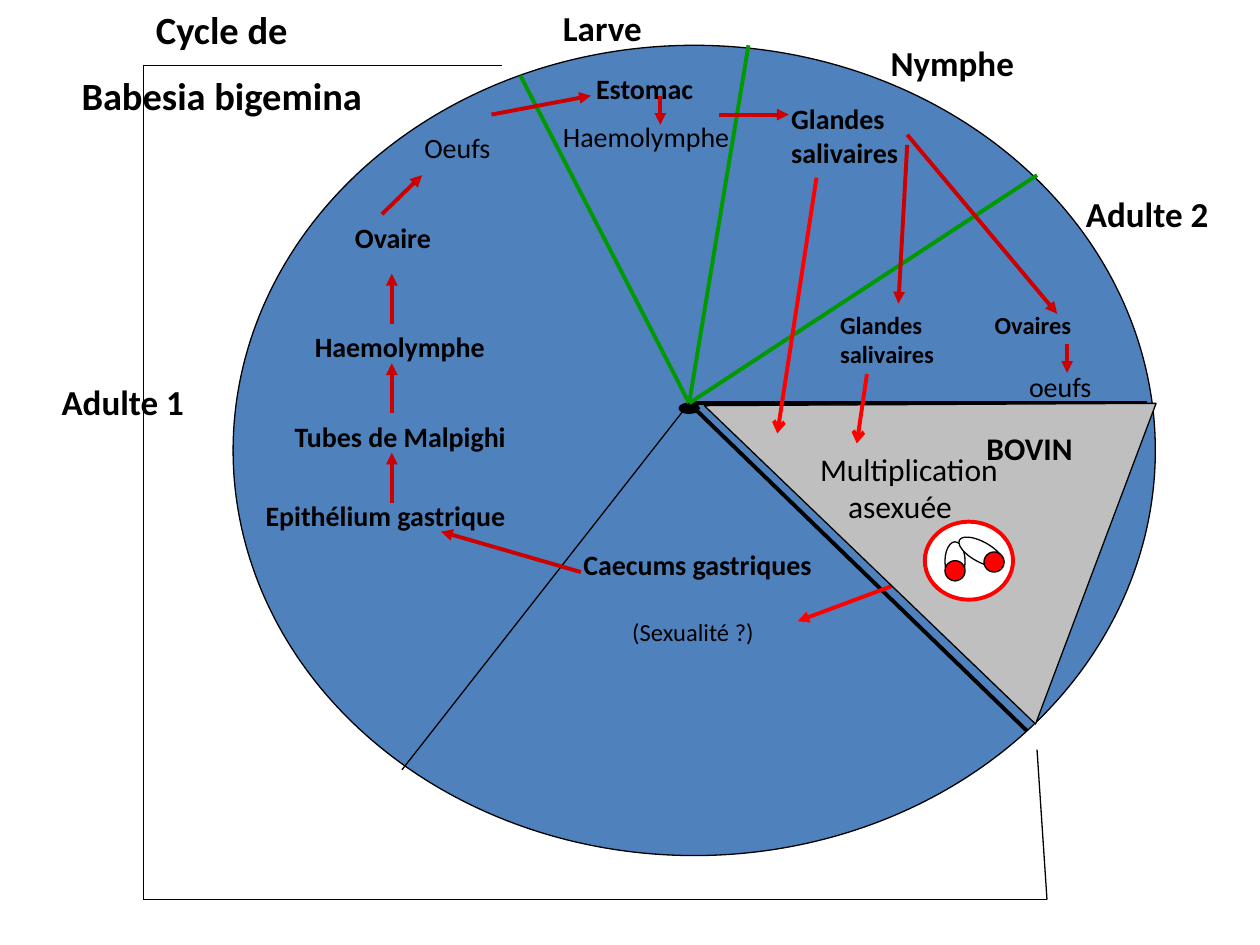
from dataclasses import dataclass
from itertools import pairwise

from lxml import etree
from pptx import Presentation
from pptx.dml.color import RGBColor
from pptx.enum.shapes import MSO_CONNECTOR, MSO_SHAPE
from pptx.enum.text import MSO_AUTO_SIZE, PP_ALIGN
from pptx.oxml.ns import qn
from pptx.util import Pt

OVAL = MSO_SHAPE.OVAL
TRIANGLE = MSO_SHAPE.ISOSCELES_TRIANGLE
STRAIGHT = MSO_CONNECTOR.STRAIGHT
GROW = MSO_AUTO_SIZE.SHAPE_TO_FIT_TEXT
LEFT, CENTER = PP_ALIGN.LEFT, PP_ALIGN.CENTER

Point = tuple[float, float]


@dataclass(frozen=True)
class Theme:
    font: str = "Calibri"
    black: str = "000000"
    white: str = "FFFFFF"
    wheel: str = "4F81BD"
    cattle: str = "BFBFBF"
    stage: str = "009900"
    tick_path: str = "CC0000"
    red: str = "FF0000"
    thin: float = 0.75
    thick: float = 2.25
    title: float = 22
    heading: float = 20
    host: float = 18
    body: float = 16
    small: float = 14


THEME = Theme()


@dataclass(frozen=True)
class Line:
    start: Point
    end: Point
    color: str = THEME.tick_path
    width: float = THEME.thick
    head: str = "triangle"


@dataclass(frozen=True)
class Body:
    left: float
    top: float
    width: float
    height: float
    fill: str
    line: str = THEME.black
    weight: float = THEME.thin
    rotation: float = 0
    kind: MSO_SHAPE = OVAL


@dataclass(frozen=True)
class Words:
    text: str
    bold: bool = True
    indent: float = 0


@dataclass(frozen=True)
class Label:
    left: float
    top: float
    width: float
    height: float
    size: float
    paras: tuple[Words, ...]
    align: PP_ALIGN = LEFT
    spacing: float = 0.5  # share of the type size, between paragraphs


def draw_line(page, line: Line) -> None:
    ends = [Pt(value) for value in (*line.start, *line.end)]
    connector = page.shapes.add_connector(STRAIGHT, *ends)
    connector.line.color.rgb = RGBColor.from_string(line.color)
    connector.line.width = Pt(line.width)
    if line.head:
        outline = connector.line._get_or_add_ln()
        etree.SubElement(outline, qn("a:tailEnd"), type=line.head)
    etree.SubElement(connector._element.spPr, qn("a:effectLst"))


def draw_body(page, body: Body):
    shape = page.shapes.add_shape(
        body.kind, Pt(body.left), Pt(body.top), Pt(body.width), Pt(body.height))
    shape.shadow.inherit = False
    shape.fill.solid()
    shape.fill.fore_color.rgb = RGBColor.from_string(body.fill)
    shape.line.color.rgb = RGBColor.from_string(body.line)
    shape.line.width = Pt(body.weight)
    shape.rotation = body.rotation
    return shape


def draw_label(page, label: Label) -> None:
    box = page.shapes.add_textbox(
        Pt(label.left), Pt(label.top), Pt(label.width), Pt(label.height))
    frame = box.text_frame
    frame.word_wrap = True
    frame.auto_size = GROW
    for index, words in enumerate(label.paras):
        para = frame.add_paragraph() if index else frame.paragraphs[0]
        para.alignment = label.align
        if index:
            para.space_before = Pt(label.size * label.spacing)
        if words.indent:
            para._p.get_or_add_pPr().set("marL", str(Pt(words.indent)))
        span = para.add_run()
        span.text = words.text
        span.font.name = THEME.font
        span.font.size = Pt(label.size)
        span.font.bold = words.bold
        span.font.color.rgb = RGBColor.from_string(THEME.black)


# Wheel, hub and the spokes between the stages
WHEEL = Body(133.2, 25.9, 527, 463, THEME.wheel)
HUB = Body(388.1, 230.4, 11.5, 5.8, THEME.black)
CENTRE = (393.8, 230.4)
SPOKES = [
    Line(CENTRE, end, color, width, "") for end, color, width in (
        ((655.2, 230.4), THEME.black, THEME.thick),
        ((586.8, 417.6), THEME.black, THEME.thick),
        ((592.6, 100.1), THEME.stage, THEME.thick),
        ((427.7, 25.9), THEME.stage, THEME.thick),
        ((297.4, 43.2), THEME.stage, THEME.thick),
        ((229.7, 439.9), THEME.black, THEME.thin),
    )
]
FRAME = ((286.6, 37.4), (82.1, 37.4), (82.1, 514.1), (598.3, 514.1), (592.6, 428.4))

# Path of the parasite through the tick
TICK_ARROWS = [
    Line((518.4, 77), (604.1, 179.3)),
    Line((518.4, 82.8), (513.4, 173.5)),
    Line((609.8, 196.6), (609.8, 213.1)),
    Line((280.8, 65.5), (337.7, 54.7)),
    Line((377.3, 54.7), (377.3, 71.3)),
    Line((411.1, 65.5), (450.7, 65.5)),
    Line((331.9, 326.9), (252, 303.8)),
    *(Line((223.9, y), (223.9, y - 28.6)) for y in (287.3, 236.2, 185.1)),
    Line((218.2, 122.4), (241.2, 100.1)),
    Line((517.7, 331.9), (455.8, 355), THEME.red),
]

# Cattle sector with the infected blood cell
SECTOR = Body(415.4, 159.1, 195.8, 241.2, THEME.cattle, rotation=290.6, kind=TRIANGLE)
APEX = 0.53
CATTLE_ARROWS = [
    Line((495.4, 213.8), (489.6, 253.4), THEME.red, head="arrow"),
    Line((466.6, 101.5), (444.2, 247.7), THEME.red, head="arrow"),
]
CELL = [
    Body(528.5, 298.1, 50.4, 44.6, THEME.white, THEME.red, THEME.thick),
    Body(540, 309.6, 11.5, 22.3, THEME.white),
    Body(546.5, 309.6, 28.1, 11.5, THEME.white, rotation=28.7),
    Body(540, 320.4, 11.5, 11.5, THEME.red),
    Body(562.3, 315.4, 11.5, 11.5, THEME.red),
]

LABELS = [
    Label(0, 0, 253.4, 74.2, THEME.title,
          (Words("Cycle de"), Words("Babesia bigemina")), CENTER),
    # Stages
    Label(314.6, 0, 68.4, 31.7, THEME.heading, (Words("Larve"),)),
    Label(501.8, 20.2, 99.4, 31.7, THEME.heading, (Words("Nymphe"),)),
    Label(613.4, 106.6, 106.6, 31.7, THEME.heading, (Words("Adulte 2"),)),
    Label(28.1, 213.8, 103.7, 31.7, THEME.heading, (Words("Adulte 1"),)),
    # Organs
    Label(314.6, 37.4, 118.8, 55.4, THEME.body,
          (Words("Estomac", indent=19), Words("Haemolymphe", False))),
    Label(445, 54.7, 102.2, 46.1, THEME.body, (Words("Glandes salivaires"),)),
    Label(473, 173.5, 80, 41, THEME.small, (Words("Glandes salivaires"),)),
    Label(561.3, 173.5, 87.4, 24.2, THEME.small, (Words("Ovaires"),)),
    Label(581, 207.4, 67.7, 26.6, THEME.body, (Words("oeufs", False),)),
    Label(326.2, 309.6, 164.2, 26.6, THEME.body, (Words("Caecums gastriques"),)),
    Label(354.2, 349.2, 164.2, 23.8, THEME.small, (Words("(Sexualité ?)", False),)),
    Label(144.7, 281.5, 193, 26.6, THEME.body, (Words("Epithélium gastrique"),)),
    Label(161.3, 236.2, 158.4, 26.6, THEME.body, (Words("Tubes de Malpighi"),)),
    Label(172.8, 185, 164.2, 26.6, THEME.body, (Words("Haemolymphe"),)),
    Label(195.8, 122.4, 96.5, 26.6, THEME.body, (Words("Ovaire"),)),
    Label(235.4, 71.3, 67.7, 26.6, THEME.body, (Words("Oeufs", False),)),
    # Cattle
    Label(556.6, 241.9, 95.8, 28.8, THEME.host, (Words("BOVIN"),)),
    Label(461.5, 253.4, 140.4, 51.1, THEME.host,
          (Words("Multiplication", False), Words("asexuée", False, 16)), spacing=0),
]


def main() -> None:
    deck = Presentation()
    deck.slide_width, deck.slide_height = Pt(720), Pt(540)
    page = deck.slides.add_slide(deck.slide_layouts[6])

    draw_body(page, WHEEL)
    draw_body(page, HUB)
    frame = [Line(a, b, THEME.black, THEME.thin, "") for a, b in pairwise(FRAME)]
    for line in SPOKES + TICK_ARROWS + frame:
        draw_line(page, line)

    draw_body(page, SECTOR).adjustments[0] = APEX
    for arrow in CATTLE_ARROWS:
        draw_line(page, arrow)
    for part in CELL:
        draw_body(page, part)
    for label in LABELS:
        draw_label(page, label)

    deck.save("out.pptx")


if __name__ == "__main__":
    main()
